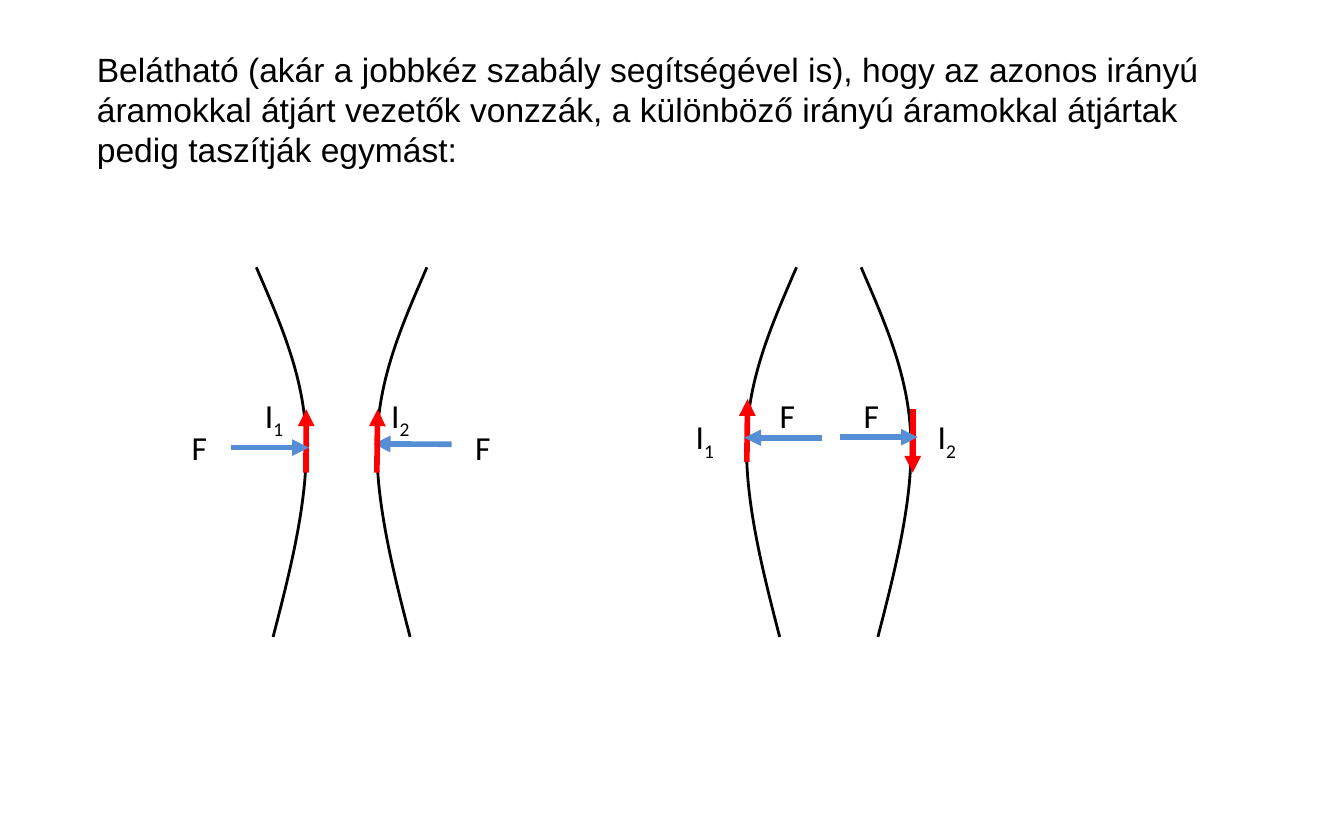
from dataclasses import dataclass

from lxml import etree
from pptx import Presentation
from pptx import util as u
from pptx.dml.color import RGBColor
from pptx.enum import shapes, text
from pptx.oxml import ns

BLACK, RED, BLUE = "000000", "FF0000", "558ED5"
TOP = 143.2
BEND = [
    (0, 0), (12.4, 28.8), (25.2, 57), (26.6, 90),
    (28.1, 123), (18.7, 160.6), (9, 198),
]


@dataclass
class Wire:
    left: float
    side: int


@dataclass
class Arrow:
    start: tuple[float, float]
    end: tuple[float, float]
    color: str


@dataclass
class Label:
    left: float
    top: float
    width: float
    base: str
    sub: str = ""


def paint(part, color: str) -> None:
    part.rgb = RGBColor.from_string(color)


def bend_lines(shape) -> None:
    track = shape._element.find(".//" + ns.qn("a:path"))
    lines = track.findall(ns.qn("a:lnTo"))
    for first in range(0, len(lines), 3):
        cubic = etree.SubElement(track, ns.qn("a:cubicBezTo"))
        for line in lines[first:first + 3]:
            cubic.append(line[0])
            track.remove(line)


def draw_wire(slide, wire: Wire) -> None:
    pts = [(u.Pt(wire.left + wire.side * x), u.Pt(TOP + y)) for x, y in BEND]
    pen = slide.shapes.build_freeform(*pts[0])
    pen.add_line_segments(pts[1:], close=False)
    shape = pen.convert_to_shape()
    bend_lines(shape)
    shape.shadow.inherit = False
    shape.fill.background()
    shape.line.width = u.Pt(1.5)
    paint(shape.line.color, BLACK)


def draw_arrow(slide, arrow: Arrow) -> None:
    ends = [u.Pt(v) for v in arrow.start + arrow.end]
    line = slide.shapes.add_connector(shapes.MSO_CONNECTOR.STRAIGHT, *ends)
    line.line.width = u.Pt(3)
    paint(line.line.color, arrow.color)
    props = line._element.spPr
    tip = etree.SubElement(props.find(ns.qn("a:ln")), ns.qn("a:tailEnd"))
    tip.set("type", "triangle")
    etree.SubElement(props, ns.qn("a:effectLst"))


def add_run(para, words: str, font: str, base: int = 0) -> None:
    run = para.add_run()
    run.text = words
    run.font.name = font
    run.font.size = u.Pt(18)
    paint(run.font.color, BLACK)
    if base:
        run.font._element.set("baseline", str(base * 1000))


def add_box(slide, left: float, top: float, width: float, height: float, wrap: bool):
    box = slide.shapes.add_textbox(*map(u.Pt, (left, top, width, height)))
    frame = box.text_frame
    frame.word_wrap = wrap
    frame.auto_size = text.MSO_AUTO_SIZE.SHAPE_TO_FIT_TEXT
    return frame.paragraphs[0]


def draw_label(slide, label: Label) -> None:
    para = add_box(slide, label.left, label.top, label.width, 29, False)
    add_run(para, label.base, "Calibri")
    if label.sub:
        add_run(para, label.sub, "Calibri", -25)


WIRES = [Wire(137.3, 1), Wire(228.7, -1), Wire(426.7, -1), Wire(461.3, 1)]
ARROWS = [
    Arrow((242, 238), (200.2, 237.8), BLUE),
    Arrow((201.9, 253.2), (202.3, 219.3), RED),
    Arrow((163.9, 253.2), (164.1, 219.3), RED),
    Arrow((123.8, 239.8), (165.5, 239.8), BLUE),
    Arrow((400.1, 247.5), (400.5, 213.8), RED),
    Arrow((489, 219.3), (489, 253.2), RED),
    Arrow((440.6, 234.5), (398.8, 234.5), BLUE),
    Arrow((450, 234.2), (491.7, 234.2), BLUE),
]
LABELS = [
    Label(134.9, 208, 25, "I", "1"),
    Label(202.5, 208, 25, "I", "2"),
    Label(95.6, 225, 23, "F"),
    Label(247.5, 225, 23, "F"),
    Label(365.6, 219.4, 25, "I", "1"),
    Label(495.2, 219.4, 25, "I", "2"),
    Label(410.6, 208, 23, "F"),
    Label(455.6, 208, 23, "F"),
]


def main() -> None:
    deck = Presentation()
    deck.slide_width, deck.slide_height = u.Pt(720), u.Pt(450)
    slide = deck.slides.add_slide(deck.slide_layouts[6])
    para = add_box(slide, 44.8, 22.5, 630, 72.7, True)
    add_run(
        para,
        "Belátható (akár a jobbkéz szabály segítségével is), hogy az azonos irányú "
        "áramokkal átjárt vezetők vonzzák, a különböző irányú áramokkal átjártak "
        "pedig taszítják egymást:",
        "Arial",
    )
    for wire in WIRES:
        draw_wire(slide, wire)
    for arrow in ARROWS:
        draw_arrow(slide, arrow)
    for label in LABELS:
        draw_label(slide, label)
    deck.save("out.pptx")


if __name__ == "__main__":
    main()
